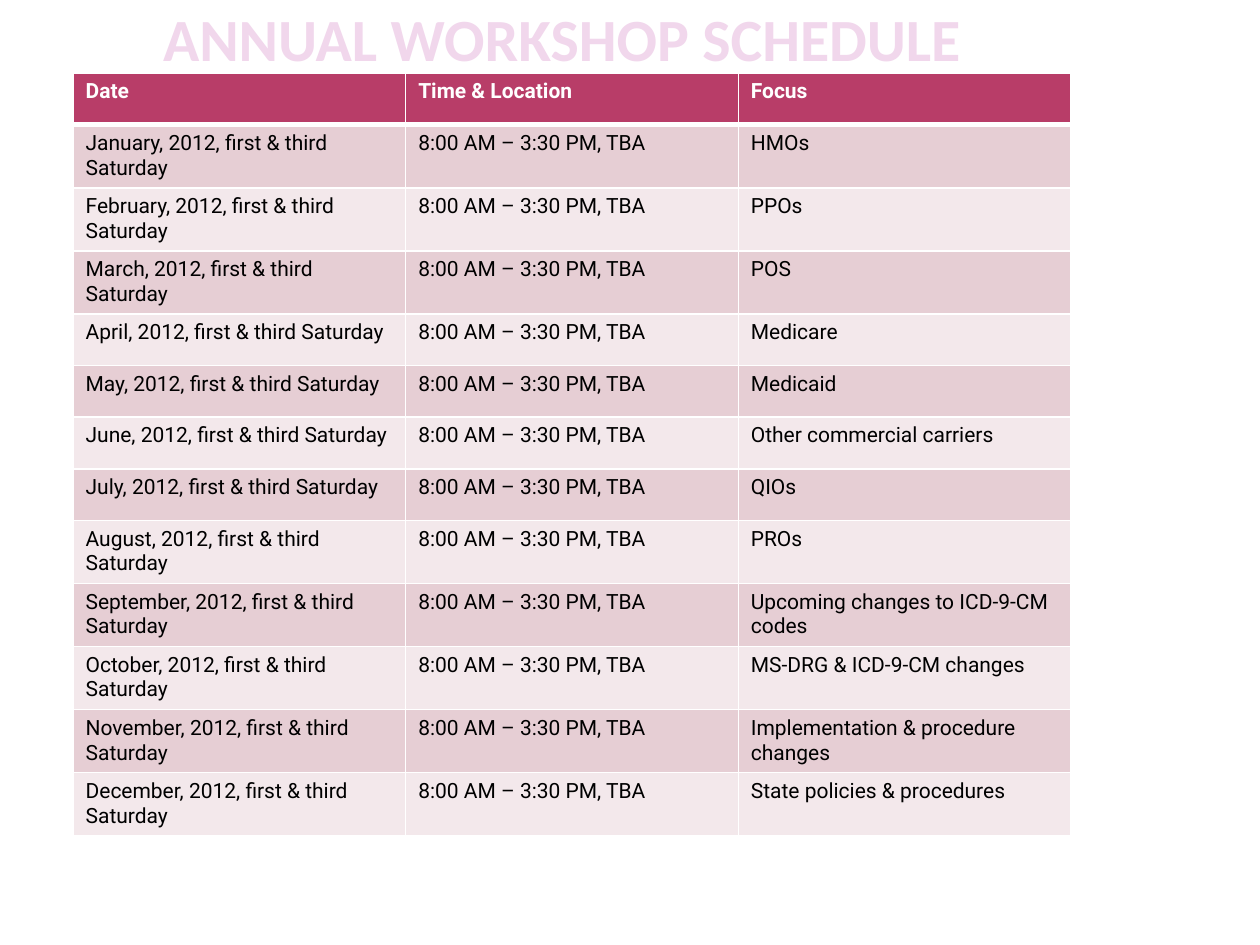
from dataclasses import dataclass

from lxml import etree
from pptx import Presentation
from pptx.dml.color import RGBColor
from pptx.enum import text
from pptx.oxml import ns
from pptx.util import Inches, Pt

COLORS = {
    "title": "F1D7EC", "outline": "5E1A50", "header": "B83D68", "odd": "E6CED4",
    "even": "F3E8EB", "white": "FFFFFF", "black": "000000",
}
HEADINGS = ("Date", "Time & Location", "Focus")
HOURS = "8:00 AM – 3:30 PM, TBA"
COLUMN_WIDTH = Inches(2.64)
ROW_HEIGHT = Inches(0.41)


@dataclass(frozen=True)
class Workshop:
    month: str
    focus: str

    def entries(self) -> tuple[str, str, str]:
        return f"{self.month}, 2012, first & third Saturday", HOURS, self.focus


@dataclass(frozen=True)
class RowStyle:
    fill: str
    ink: str
    bold: bool = False
    top: float = 1
    bottom: float = 1


WORKSHOPS = (
    Workshop("January", "HMOs"),
    Workshop("February", "PPOs"),
    Workshop("March", "POS"),
    Workshop("April", "Medicare"),
    Workshop("May", "Medicaid"),
    Workshop("June", "Other commercial carriers"),
    Workshop("July", "QIOs"),
    Workshop("August", "PROs"),
    Workshop("September", "Upcoming changes to ICD-9-CM codes"),
    Workshop("October", "MS-DRG & ICD-9-CM changes"),
    Workshop("November", "Implementation & procedure changes"),
    Workshop("December", "State policies & procedures"),
)


def rgb(name: str) -> RGBColor:
    return RGBColor.from_string(COLORS[name])


def add_run(paragraph, words: str, face: str, size: float, ink: str, bold: bool):
    run = paragraph.add_run()
    run.text = words
    run.font.name = face
    run.font.size = Pt(size)
    run.font.bold = bold
    run.font.color.rgb = rgb(ink)
    return run


def insert_line(properties, index: int, tag: str, width: float, color: str) -> None:
    line = etree.Element(ns.qn(tag), w=str(int(Pt(width))))
    fill = etree.SubElement(line, ns.qn("a:solidFill"))
    etree.SubElement(fill, ns.qn("a:srgbClr"), val=COLORS[color])
    properties.insert(index, line)


def add_title(slide) -> None:
    frame = slide.shapes.add_textbox(Inches(0.5), 0, Inches(7.92), Inches(0.58)).text_frame
    frame.word_wrap = True
    frame.vertical_anchor = text.MSO_ANCHOR.BOTTOM
    frame.margin_left = frame.margin_right = Inches(0.05)
    frame.margin_top = frame.margin_bottom = 0
    heading = frame.paragraphs[0]
    heading.alignment = text.PP_ALIGN.CENTER
    run = add_run(heading, "ANNUAL WORKSHOP SCHEDULE", "Calibri", 34.2, "title", True)
    insert_line(run.font._element, 0, "a:ln", 0.04, "outline")


def fill_row(row, entries: tuple[str, ...], style: RowStyle) -> None:
    row.height = ROW_HEIGHT
    borders = {"a:lnL": 1, "a:lnR": 1, "a:lnT": style.top, "a:lnB": style.bottom}
    for cell, entry in zip(row.cells, entries):
        cell.fill.solid()
        cell.fill.fore_color.rgb = rgb(style.fill)
        add_run(cell.text_frame.paragraphs[0], entry, "Roboto", 12, style.ink, style.bold)
        for index, (tag, width) in enumerate(borders.items()):
            insert_line(cell._tc.get_or_add_tcPr(), index, tag, width, "white")


def add_schedule(slide) -> None:
    count = len(WORKSHOPS) + 1
    schedule = slide.shapes.add_table(
        count, len(HEADINGS), Inches(0.58), Inches(0.58),
        COLUMN_WIDTH * len(HEADINGS), ROW_HEIGHT * count,
    ).table
    for column in schedule.columns:
        column.width = COLUMN_WIDTH
    fill_row(schedule.rows[0], HEADINGS, RowStyle("header", "white", True, bottom=3))
    for number, workshop in enumerate(WORKSHOPS, 1):
        band = "odd" if number % 2 else "even"
        style = RowStyle(band, "black", top=3 if number == 1 else 1)
        fill_row(schedule.rows[number], workshop.entries(), style)


def main() -> None:
    """Build the annual workshop schedule slide."""
    deck = Presentation()
    deck.slide_width, deck.slide_height = Inches(10), Inches(7.5)
    slide = deck.slides.add_slide(deck.slide_layouts[6])
    add_title(slide)
    add_schedule(slide)
    deck.save("out.pptx")


if __name__ == "__main__":
    main()
